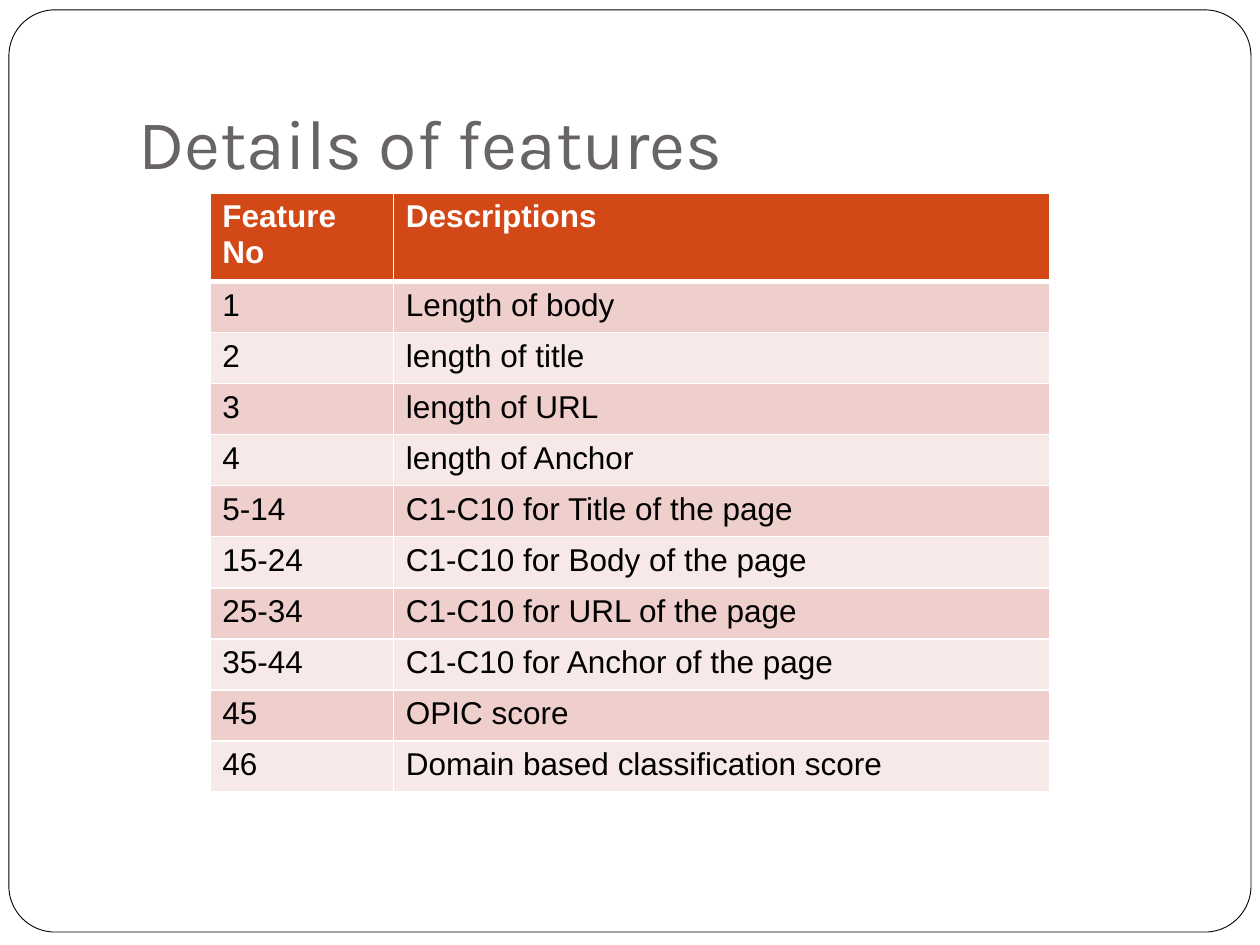
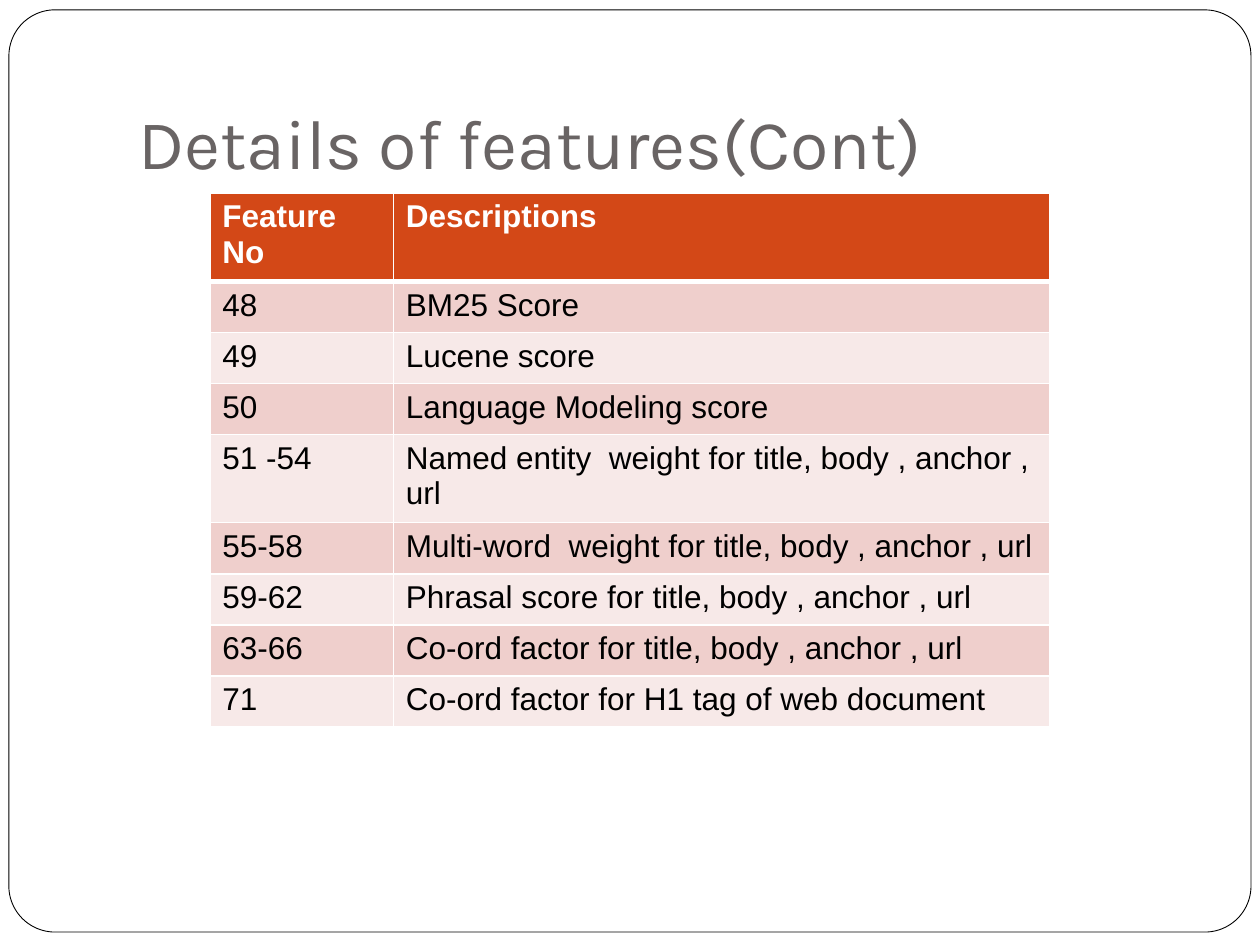
from lxml import etree
from pptx import Presentation
from pptx.dml.color import RGBColor
from pptx.enum.shapes import MSO_SHAPE
from pptx.enum.text import MSO_ANCHOR
from pptx.oxml.ns import qn
from pptx.util import Cm, Pt

ROUNDED = MSO_SHAPE.ROUNDED_RECTANGLE
BOTTOM = MSO_ANCHOR.BOTTOM

WHITE = RGBColor(0xFF, 0xFF, 0xFF)
BLACK = RGBColor(0x00, 0x00, 0x00)
TITLE_GREY = RGBColor(0x69, 0x64, 0x64)
HEADER_ORANGE = RGBColor(0xD3, 0x48, 0x17)
BANDS = (RGBColor(0xEF, 0xCF, 0xCC), RGBColor(0xF7, 0xE9, 0xE8))

# Boxes: left, top, width, height
FRAME_BOX = (Cm(0.18), Cm(0.2), Cm(25.04), Cm(18.59))
TITLE_BOX = (Cm(2.54), Cm(0.76), Cm(21.59), Cm(3.18))
TABLE_LEFT, TABLE_TOP = Cm(4.23), Cm(3.89)
COLUMN_WIDTHS = (Cm(3.7), Cm(13.23))
ROW_HEIGHT = Cm(1.03)
THIN, THICK = Pt(1), Pt(3)

HEADINGS = ("Feature No", "Descriptions")
SLIDES = (
    ("Details of features", (
        ("1", "Length of body"),
        ("2", "length of title"),
        ("3", "length of URL"),
        ("4", "length of Anchor"),
        ("5-14", "C1-C10 for Title of the page"),
        ("15-24", "C1-C10 for Body of the page"),
        ("25-34", "C1-C10 for URL of the page"),
        ("35-44", "C1-C10 for Anchor of the page"),
        ("45", "OPIC score"),
        ("46", "Domain based classification score"),
    )),
    ("Details of features(Cont)", (
        ("48", "BM25 Score"),
        ("49", "Lucene score"),
        ("50", "Language Modeling score"),
        ("51 -54", "Named entity  weight for title, body , anchor , url"),
        ("55-58", "Multi-word  weight for title, body , anchor , url"),
        ("59-62", "Phrasal score for title, body , anchor , url"),
        ("63-66", "Co-ord factor for title, body , anchor , url"),
        ("71", "Co-ord factor for H1 tag of web document"),
    )),
)


def style_font(paragraph, name, size, color, bold=False):
    font = paragraph.font
    font.name, font.size, font.bold = name, Pt(size), bold
    font.color.rgb = color


def add_frame(slide, box):
    frame = slide.shapes.add_shape(ROUNDED, *box)
    frame.adjustments[0] = 0.05
    frame.shadow.inherit = False
    frame.fill.solid()
    frame.fill.fore_color.rgb = WHITE
    frame.line.color.rgb = BLACK
    frame.line.width = Pt(0.5)


def add_title(slide, box, text):
    text_frame = slide.shapes.add_textbox(*box).text_frame
    text_frame.word_wrap = True
    text_frame.vertical_anchor = BOTTOM
    text_frame.margin_bottom = Cm(0.25)
    text_frame.text = text
    style_font(text_frame.paragraphs[0], "Karla", 40, TITLE_GREY)


def set_borders(cell, top, bottom):
    """Draw white borders; they must precede the cell's fill in the XML."""
    properties = cell._tc.get_or_add_tcPr()
    for side, width in (("L", THIN), ("R", THIN), ("T", top), ("B", bottom)):
        line = etree.SubElement(properties, qn(f"a:ln{side}"), w=str(width))
        fill = etree.SubElement(line, qn("a:solidFill"))
        etree.SubElement(fill, qn("a:srgbClr"), val=str(WHITE))


def add_feature_table(slide, left, top, features):
    rows = (HEADINGS, *features)
    table = slide.shapes.add_table(
        len(rows), len(HEADINGS), left, top,
        sum(COLUMN_WIDTHS), ROW_HEIGHT * len(rows)).table
    table.horz_banding = False
    for column, width in zip(table.columns, COLUMN_WIDTHS):
        column.width = width

    for row_index, texts in enumerate(rows):
        is_header = row_index == 0
        table.rows[row_index].height = ROW_HEIGHT
        background = HEADER_ORANGE if is_header else BANDS[(row_index - 1) % 2]
        for column_index, text in enumerate(texts):
            cell = table.cell(row_index, column_index)
            # The thick rule lies between the header and the first feature
            set_borders(cell, THICK if row_index == 1 else THIN,
                        THICK if is_header else THIN)
            cell.fill.solid()
            cell.fill.fore_color.rgb = background
            cell.text = text
            style_font(cell.text_frame.paragraphs[0], "Arial", 18,
                       WHITE if is_header else BLACK, is_header)


def add_feature_slide(presentation, title, features):
    slide = presentation.slides.add_slide(presentation.slide_layouts[6])
    add_frame(slide, FRAME_BOX)
    add_title(slide, TITLE_BOX, title)
    add_feature_table(slide, TABLE_LEFT, TABLE_TOP, features)


def main():
    presentation = Presentation()
    presentation.slide_width, presentation.slide_height = Cm(25.4), Cm(19.05)
    for title, features in SLIDES:
        add_feature_slide(presentation, title, features)
    presentation.save("out.pptx")


if __name__ == "__main__":
    main()
